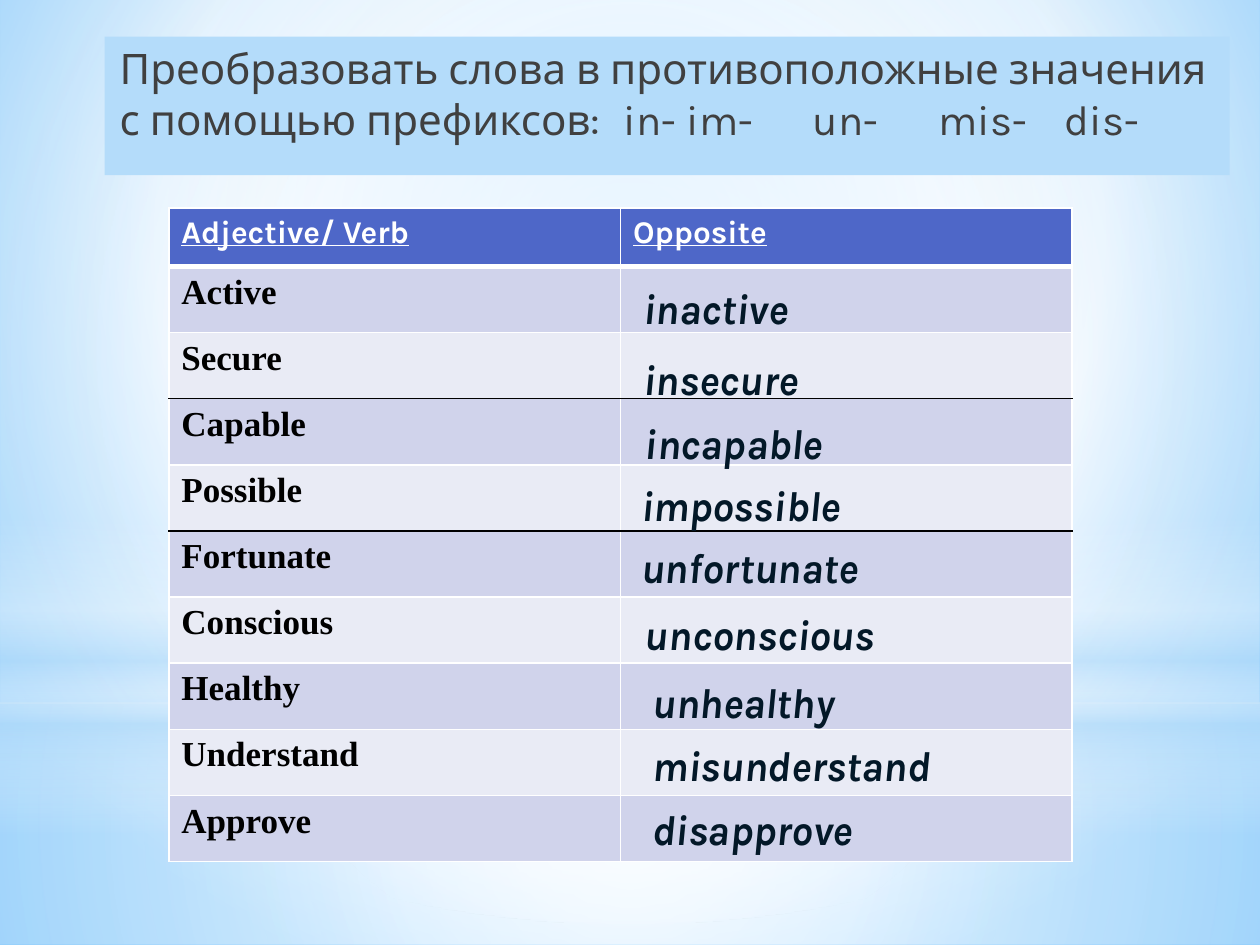
from lxml import etree
from pptx import Presentation
from pptx import util as u
from pptx.dml.color import RGBColor
from pptx.enum import shapes, text
from pptx.oxml.ns import qn

COLORS = {
    "white": "FFFFFF", "black": "000000", "pale": "B4DCFA",
    "sky": "9ED5FF", "azure": "5BB9FF", "header": "4E67C8",
    "odd": "D0D3EB", "even": "E9EBF5", "grey": "404040", "ink": "031828",
}
WIDTH, HEIGHT = u.Inches(10), u.Inches(7.5)
CENTRE = (50, 50, 50, 50)
RECTANGLE = shapes.MSO_SHAPE.RECTANGLE

BACKDROP = [
    (RECTANGLE, (0, 74.4, 100, 25.6),
     [(0, "white", 91), (37, "white", 76), (100, "pale", 79)], CENTRE),
    (RECTANGLE, (0, 0, 100, 74.4),
     [(0, "white", 89), (48, "white", 62), (100, "pale", 79)], CENTRE),
    (RECTANGLE, (0, 54.9, 100, 33.3),
     [(0, "white", 0), (29, "white", 30), (45, "pale", 40),
      (55, "white", 26), (65, "pale", 60), (100, "white", 0)], None),
    (shapes.MSO_SHAPE.OVAL, (0, 23.3, 100, 74.4),
     [(0, "white", 100), (56, "white", 0)], CENTRE),
]
TASK = "Преобразовать слова в противоположные значения с помощью префиксов:"
PREFIXES = [("in-", 4.23), ("im-", 4.89), ("un-", 5.65), ("mis-", 6.49), ("dis-", 7.35)]
HEADINGS = ["Adjective/ Verb", "Opposite"]
WORDS = ["Active", "Secure", "Capable", "Possible", "Fortunate",
         "Conscious", "Healthy", "Understand", "Approve"]
RULED_ROWS = (2, 4)
ANSWERS = [
    ("inactive", 50.1, 29.2, 20.4), ("insecure", 50.1, 36.8, 18.8),
    ("incapable", 50.2, 43.47, 22), ("impossible", 49.9, 50.13, 22),
    ("unfortunate", 49.9, 56.67, 23.6), ("unconscious", 50.2, 63.73, 24.4),
    ("unhealthy", 50.8, 70.93, 18.9), ("misunderstand", 50.8, 77.6, 25.4),
    ("disapprove", 50.8, 84.4, 25.4),
]


def across(percent):
    return u.Emu(int(WIDTH * percent / 100))


def down(percent):
    return u.Emu(int(HEIGHT * percent / 100))


def area(left, top, width, height):
    return across(left), down(top), across(width), down(height)


def paint(fill, color):
    fill.solid()
    fill.fore_color.rgb = RGBColor.from_string(COLORS[color])


def set_gradient(properties, stops, focus):
    gradient = etree.Element(qn("a:gradFill"), rotWithShape="1")
    stop_list = etree.SubElement(gradient, qn("a:gsLst"))
    for position, color, opacity in stops:
        stop = etree.SubElement(stop_list, qn("a:gs"), pos=str(position * 1000))
        tone = etree.SubElement(stop, qn("a:srgbClr"), val=COLORS[color])
        if opacity < 100:
            etree.SubElement(tone, qn("a:alpha"), val=str(opacity * 1000))
    if focus:
        circle = etree.SubElement(gradient, qn("a:path"), path="circle")
        edges = {side: str(share * 1000) for side, share in zip("ltrb", focus)}
        etree.SubElement(circle, qn("a:fillToRect"), **edges)
    else:
        etree.SubElement(gradient, qn("a:lin"), ang="5400000", scaled="0")
    properties.replace(properties.find(qn("a:solidFill")), gradient)


def add_run(paragraph, words, size, color, font="Karla", **style):
    run = paragraph.add_run()
    run.text = words
    run.font.size = u.Pt(size)
    run.font.name = font
    run.font.color.rgb = RGBColor.from_string(COLORS[color])
    for name, value in style.items():
        setattr(run.font, name, value)


def add_backdrop(slide):
    paint(slide.background.fill, "sky")
    set_gradient(slide.element.find(".//" + qn("p:bgPr")),
                 [(0, "sky", 100), (60, "white", 100), (100, "azure", 100)],
                 (20, 10, 20, 60))
    for kind, place, stops, focus in BACKDROP:
        shape = slide.shapes.add_shape(kind, *area(*place))
        shape.shadow.inherit = False
        shape.line.fill.background()
        paint(shape.fill, "white")
        set_gradient(shape.element.spPr, stops, focus)


def format_title(slide):
    title = slide.shapes.title
    title.element.getparent().append(title.element)
    title.left, title.top, title.width, title.height = area(8.3, 3.87, 89.3, 14.67)
    paint(title.fill, "pale")
    frame = title.text_frame
    frame.word_wrap = True
    frame.auto_size = text.MSO_AUTO_SIZE.NONE
    frame.vertical_anchor = text.MSO_ANCHOR.TOP
    paragraph = frame.paragraphs[0]
    paragraph.alignment = text.PP_ALIGN.LEFT
    paragraph.space_before, paragraph.space_after = u.Pt(4.8), u.Pt(3)
    properties = paragraph._p.get_or_add_pPr()
    properties.set("marL", str(u.Inches(0.02)))
    properties.set("indent", "0")
    tabs = etree.SubElement(properties, qn("a:tabLst"))
    add_run(paragraph, TASK, 24, "grey")
    for prefix, position in PREFIXES:
        etree.SubElement(tabs, qn("a:tab"), pos=str(u.Inches(position)), algn="l")
        add_run(paragraph, "\t" + prefix, 24, "grey")


def set_borders(cell, top, bottom):
    plain = ("white", 1)
    properties = cell._tc.get_or_add_tcPr()
    sides = {"L": plain, "R": plain, "T": top, "B": bottom}
    for index, (side, (color, points)) in enumerate(sides.items()):
        line = etree.Element(qn("a:ln" + side), w=str(u.Pt(points)))
        solid = etree.SubElement(line, qn("a:solidFill"))
        etree.SubElement(solid, qn("a:srgbClr"), val=COLORS[color])
        properties.insert(index, line)


def rule_below(row):
    if row == 0:
        return "white", 3
    return ("black" if row in RULED_ROWS else "white"), 1


def add_word_table(slide):
    rows = [HEADINGS] + [[word, ""] for word in WORDS]
    table = slide.shapes.add_table(len(rows), 2, *area(13.4, 22, 71.7, 69.2)).table
    for row, entries in enumerate(rows):
        table.rows[row].height = down(7 if row else 6.2)
        fill = ("odd" if row % 2 else "even") if row else "header"
        top = rule_below(row - 1) if row else ("white", 1)
        for column, entry in enumerate(entries):
            cell = table.cell(row, column)
            paint(cell.fill, fill)
            set_borders(cell, top, rule_below(row))
            paragraph = cell.text_frame.paragraphs[0]
            if row == 0:
                add_run(paragraph, entry, 18, "white", bold=True, underline=True)
            elif entry:
                add_run(paragraph, entry, 20, "black", "Times New Roman", bold=True)


def add_answer(slide, word, left, top, width):
    frame = slide.shapes.add_textbox(*area(left, top, width, 6.67)).text_frame
    frame.word_wrap = True
    frame.auto_size = text.MSO_AUTO_SIZE.SHAPE_TO_FIT_TEXT
    add_run(frame.paragraphs[0], word, 24, "ink", bold=True, italic=True)


def main():
    presentation = Presentation()
    presentation.slide_width, presentation.slide_height = WIDTH, HEIGHT
    slide = presentation.slides.add_slide(presentation.slide_layouts[5])
    add_backdrop(slide)
    format_title(slide)
    add_word_table(slide)
    for answer in ANSWERS:
        add_answer(slide, *answer)
    presentation.save("out.pptx")


if __name__ == "__main__":
    main()
